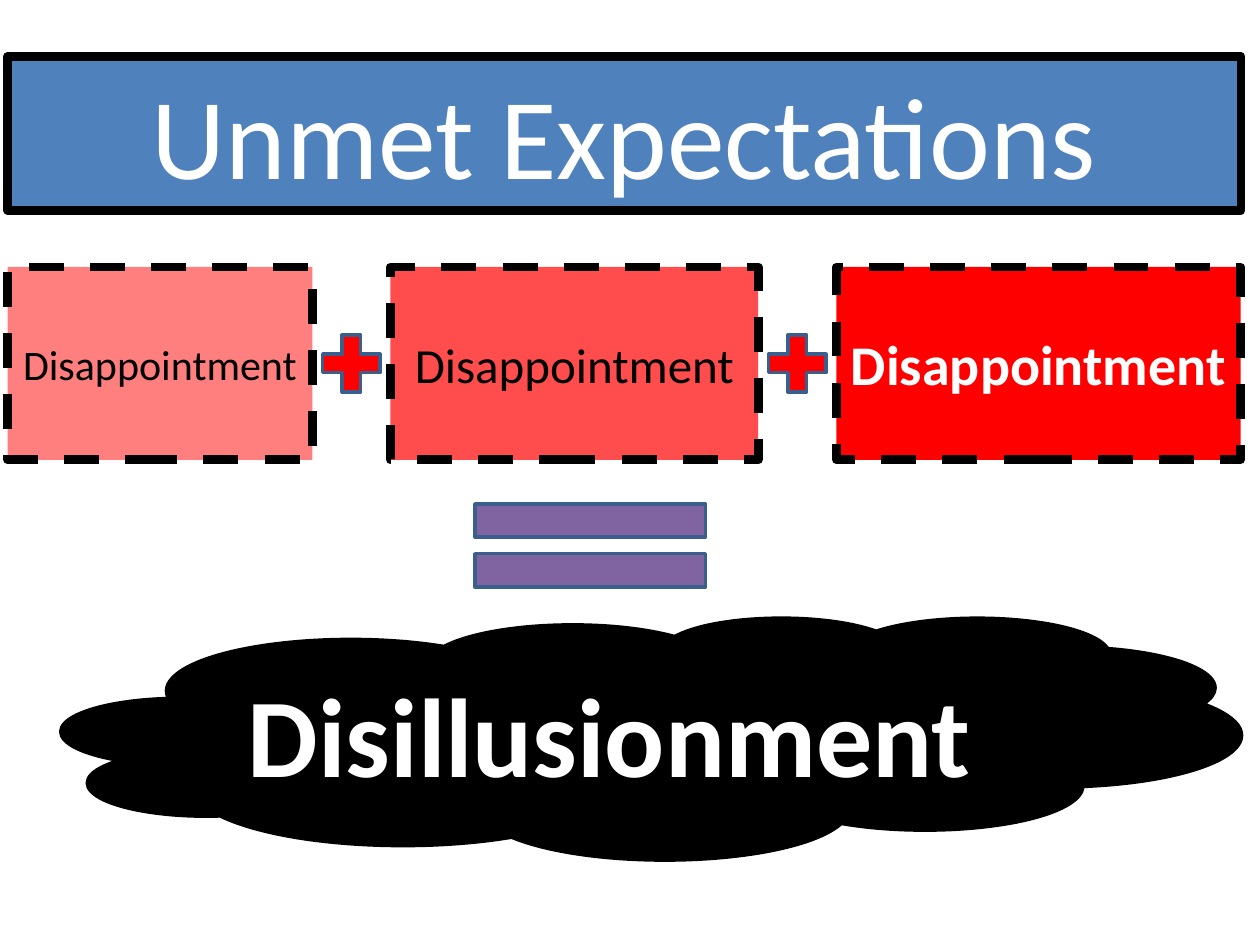
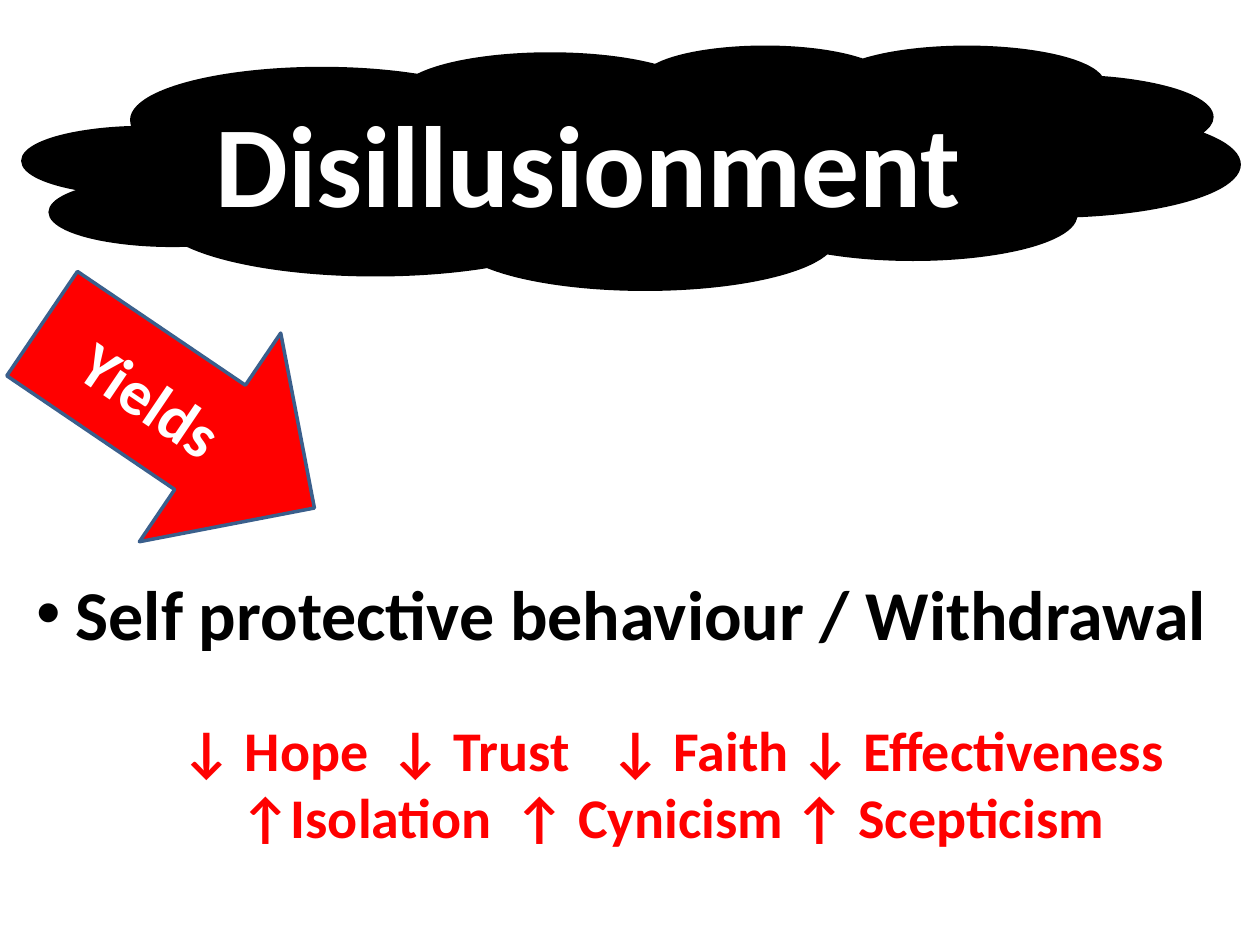
import pptx
import pptx.util
import pptx.dml.color
import pptx.enum.dml
import pptx.enum.shapes
import pptx.enum.text
import pptx.oxml
import pptx.oxml.ns
from lxml import etree

Pt = pptx.util.Pt
Shape = pptx.enum.shapes.MSO_SHAPE
Align = pptx.enum.text.PP_ALIGN
Anchor = pptx.enum.text.MSO_ANCHOR

FONT = "Calibri"
COLOURS = {
    "black": "000000",
    "white": "FFFFFF",
    "red": "FF0000",
    "blue": "4F81BD",
    "edge": "3A5F8C",
    "purple": "8064A2",
}
CLOUD_TEXT = (0.14, 0.15, 0.65, 0.65)


def colour(name):
    return pptx.dml.color.RGBColor.from_string(COLOURS[name])


def add_child(parent, tag, **attributes):
    child = etree.SubElement(parent, pptx.oxml.ns.qn(tag))
    for key, value in attributes.items():
        child.set(key, str(value))
    return child


def paint(shape, fill, line, width):
    shape.fill.solid()
    shape.fill.fore_color.rgb = colour(fill)
    shape.line.color.rgb = colour(line)
    shape.line.width = Pt(width)


def add_figure(page, kind, box, fill, line="edge", width=2):
    shape = page.shapes.add_shape(kind, *map(Pt, box))
    shape.shadow.inherit = False
    paint(shape, fill, line, width)
    return shape


def add_span(para, text, size, ink, bold):
    span = para.add_run()
    span.text = text
    span.font.name = FONT
    span.font.size = Pt(size)
    span.font.bold = bold
    span.font.color.rgb = colour(ink)


def centre_text(shape, text, size, ink="white", bold=True):
    frame = shape.text_frame
    frame.word_wrap = True
    frame.auto_size = pptx.enum.text.MSO_AUTO_SIZE.NONE
    frame.vertical_anchor = Anchor.MIDDLE
    para = frame.paragraphs[0]
    para.alignment = Align.CENTER
    add_span(para, text, size, ink, bold)


def place_title(page, box, text, size, bold):
    title = page.shapes.title
    title.left, title.top, title.width, title.height = map(Pt, box)
    centre_text(title, text, size, bold=bold)
    return title


def add_cloud(page, box):
    return add_figure(page, Shape.CLOUD, box, "black", "black")


def add_sum(page, box):
    left, top, width, height = box
    plus = 44.6
    terms = [
        (174.2, 50, 24, "black", False),
        (210.2, 70, 28, "black", False),
        (231.1, 100, 32, "white", True),
    ]
    for index, (term_width, opacity, size, ink, bold) in enumerate(terms):
        if index:
            plus_top = top + (height - plus) / 2
            add_figure(page, Shape.MATH_PLUS, (left, plus_top, plus, plus), "red")
            left += plus
        term = add_figure(page, Shape.RECTANGLE, (left, top, term_width, height), "red", "black", 5)
        term.line.dash_style = pptx.enum.dml.MSO_LINE.DASH
        if opacity < 100:
            tint = term.element.spPr.find(pptx.oxml.ns.qn("a:solidFill"))[0]
            add_child(tint, "a:alpha", val=opacity * 1000)
        centre_text(term, "Disappointment", size, ink, bold)
        left += term_width


def add_text_box(page, box):
    frame = page.shapes.add_textbox(*map(Pt, box)).text_frame
    frame.word_wrap = True
    return frame


def add_bullet(page, box, text):
    para = add_text_box(page, box).paragraphs[0]
    properties = para._p.get_or_add_pPr()
    properties.set("marL", str(Pt(22.5)))
    properties.set("indent", str(-Pt(22.5)))
    bullet_colour = add_child(properties, "a:buClr")
    add_child(bullet_colour, "a:srgbClr", val=COLOURS["black"])
    add_child(properties, "a:buFont", typeface="Arial")
    add_child(properties, "a:buChar", char="•")
    add_span(para, text, 40, "black", True)


def add_effects(page, box):
    rows = [
        (["↓ Hope", "↓ Trust", "↓ Faith", "↓ Effectiveness"], [8, 127.5, 253, 361.5]),
        (["↑Isolation", "↑ Cynicism", "↑ Scepticism"], [41.5, 198.5, 358.5]),
    ]
    frame = add_text_box(page, box)
    for index, (effects, stops) in enumerate(rows):
        para = frame.add_paragraph() if index else frame.paragraphs[0]
        para.alignment = Align.LEFT
        tabs = add_child(para._p.get_or_add_pPr(), "a:tabLst")
        for stop in stops:
            add_child(tabs, "a:tab", pos=Pt(stop), algn="l")
        for effect in effects:
            add_span(para, "\t" + effect, 32, "red", True)


def build_expectations(page):
    title = place_title(page, (4.3, 32.4, 704.9, 87.8), "Unmet Expectations", 66, False)
    paint(title, "blue", "black", 5)
    add_sum(page, (4.3, 152.6, 704.9, 110.2))
    add_figure(page, Shape.MATH_EQUAL, (247.7, 271.4, 179.3, 80.6), "purple")
    cloud = add_cloud(page, (35.3, 352.8, 673.9, 138.2))
    centre_text(cloud, "Disillusionment", 64)


def build_disillusionment(page):
    box = left, top, width, height = 13.7, 26.6, 694.1, 138.2
    add_cloud(page, box)
    x, y, across, down = CLOUD_TEXT
    title_box = (left + x * width, top + y * height, across * width, down * height)
    title = place_title(page, title_box, "Disillusionment", 66, True)
    page.shapes.element.append(title.element)
    arrow = add_figure(page, Shape.RIGHT_ARROW, (7.9, 165.6, 187.9, 144), "red")
    arrow.rotation = 34.1
    centre_text(arrow, "Yields", 36)
    add_bullet(page, (13.7, 322.6, 706.3, 93.6), "Self protective behaviour / Withdrawal")
    add_effects(page, (88.6, 405.4, 599.8, 83.5))


def main():
    deck = pptx.Presentation()
    deck.slide_width, deck.slide_height = Pt(720), Pt(540)
    for build in (build_expectations, build_disillusionment):
        build(deck.slides.add_slide(deck.slide_layouts[5]))
    deck.save("out.pptx")


if __name__ == "__main__":
    main()
